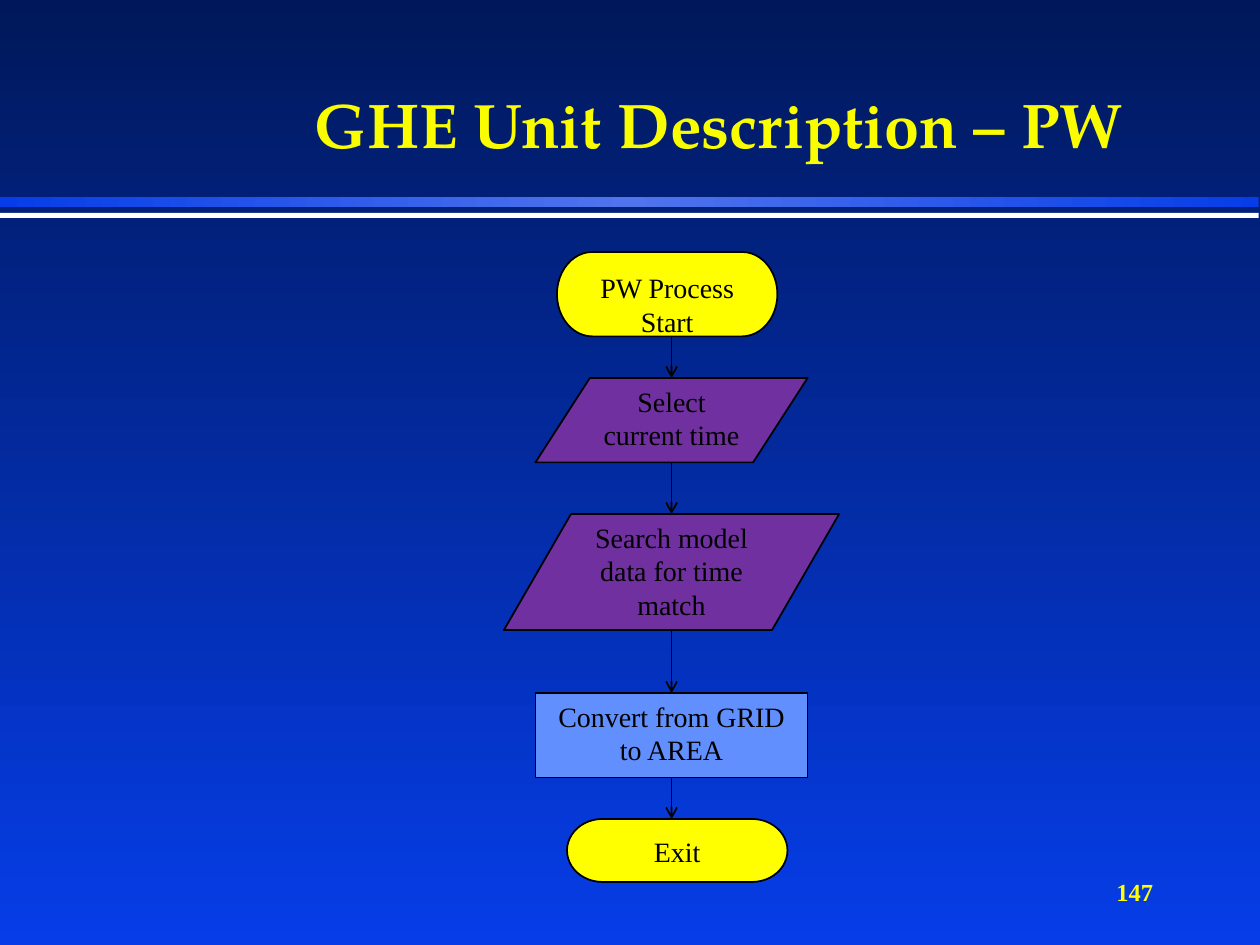
from copy import deepcopy
from typing import NamedTuple

from pptx import Presentation
from pptx.dml.color import RGBColor
from pptx.enum.shapes import MSO_CONNECTOR, MSO_SHAPE
from pptx.enum.text import MSO_ANCHOR, MSO_AUTO_SIZE, PP_ALIGN
from pptx.oxml.ns import qn
from pptx.oxml.xmlchemy import OxmlElement
from pptx.util import Inches, Pt

HUES = {
    "night": "00185A", "blue": "063DE8", "glow": "4F74EC", "white": "FFFFFF",
    "title": "FAFD00", "yellow": "FFFF00", "purple": "7030A0",
    "sky": "618FFD", "black": "000000",
}
SERIF = "Times New Roman"
AXIS = 5.33


class Step(NamedTuple):
    text: str
    kind: MSO_SHAPE
    hue: str
    left: float
    top: float
    width: float
    height: float


STEPS = [
    Step("PW Process Start", MSO_SHAPE.FLOWCHART_TERMINATOR, "yellow", 4.42, 2, 1.75, 0.67),
    Step("Select current time", MSO_SHAPE.FLOWCHART_DATA, "purple", 4.25, 3, 2.16, 0.67),
    Step("Search model data for time match", MSO_SHAPE.FLOWCHART_DATA, "purple", 4, 4.08, 2.66, 0.92),
    Step("Convert from GRID to AREA", MSO_SHAPE.FLOWCHART_PROCESS, "sky", 4.25, 5.5, 2.16, 0.67),
    Step("Exit", MSO_SHAPE.FLOWCHART_TERMINATOR, "yellow", 4.5, 6.5, 1.75, 0.5),
]


def rgb(hue: str) -> RGBColor:
    return RGBColor.from_string(HUES[hue])


def style(para, font: str, size: float, hue: str, align, bold: bool = False) -> None:
    para.alignment = align
    para.font.name = font
    para.font.size = Pt(size)
    para.font.bold = bold
    para.font.color.rgb = rgb(hue)


def add_bar(slide, top: float, height: float):
    bar = slide.shapes.add_shape(
        MSO_SHAPE.RECTANGLE, 0, Inches(top), Inches(9.99), Inches(height))
    bar.shadow.inherit = False
    bar.line.fill.background()
    return bar


def add_glow(bar) -> None:
    bar.fill.gradient()
    bar.fill.gradient_angle = 0
    stops = bar._element.spPr.find(qn("a:gradFill")).find(qn("a:gsLst"))
    stops.insert(1, deepcopy(stops[0]))
    for stop, spot, hue in zip(bar.fill.gradient_stops, (0, 0.5, 1), ("blue", "glow", "blue")):
        stop.position = spot
        stop.color.rgb = rgb(hue)


def add_step(slide, step: Step):
    shape = slide.shapes.add_shape(
        step.kind, Inches(step.left), Inches(step.top),
        Inches(step.width), Inches(step.height))
    shape.shadow.inherit = False
    shape.fill.solid()
    shape.fill.fore_color.rgb = rgb(step.hue)
    shape.line.color.rgb = rgb("black")
    shape.line.width = Pt(1)
    frame = shape.text_frame
    frame.text = step.text
    frame.word_wrap = True
    frame.vertical_anchor = MSO_ANCHOR.TOP
    style(frame.paragraphs[0], SERIF, 16, "black", PP_ALIGN.CENTER)
    return shape


def add_arrow(slide, start: Step, end: Step, above, below) -> None:
    arrow = slide.shapes.add_connector(
        MSO_CONNECTOR.STRAIGHT, Inches(AXIS), Inches(start.top + start.height),
        Inches(AXIS), Inches(end.top))
    arrow.line.color.rgb = rgb("black")
    arrow.line.width = Pt(1)
    tip = OxmlElement("a:tailEnd")
    tip.set("type", "arrow")
    arrow.line._get_or_add_ln().append(tip)
    arrow._element.spPr.append(OxmlElement("a:effectLst"))
    if start.kind == MSO_SHAPE.FLOWCHART_PROCESS:
        arrow.begin_connect(above, 2)
    if end.kind == MSO_SHAPE.FLOWCHART_PROCESS:
        arrow.end_connect(below, 0)


def add_title(slide) -> None:
    title = slide.shapes.title
    title.left, title.top = Inches(1.33), Inches(0.58)
    title.width, title.height = Inches(8.75), Inches(0.75)
    frame = title.text_frame
    frame.text = "GHE Unit Description – PW"
    frame.auto_size = MSO_AUTO_SIZE.NONE
    frame.vertical_anchor = MSO_ANCHOR.BOTTOM
    para = frame.paragraphs[0]
    para.line_spacing = 0.85
    style(para, "TeX Gyre Pagella", 36, "title", PP_ALIGN.CENTER, True)


def add_page(slide) -> None:
    box = slide.shapes.add_textbox(Inches(7.17), Inches(6.83), Inches(2.08), Inches(0.5))
    frame = box.text_frame
    frame.text = "147"
    frame.word_wrap = True
    frame.vertical_anchor = MSO_ANCHOR.MIDDLE
    style(frame.paragraphs[0], SERIF, 14, "yellow", PP_ALIGN.RIGHT, True)


def main() -> None:
    deck = Presentation()
    deck.slide_width, deck.slide_height = Inches(10), Inches(7.5)
    slide = deck.slides.add_slide(deck.slide_layouts[5])
    fill = slide.background.fill
    fill.gradient()
    fill.gradient_angle = 270
    for stop, hue in zip(fill.gradient_stops, ("night", "blue")):
        stop.color.rgb = rgb(hue)

    add_glow(add_bar(slide, 1.56, 0.08))
    rule = add_bar(slide, 1.69, 0.04)
    rule.fill.solid()
    rule.fill.fore_color.rgb = rgb("white")
    add_title(slide)
    add_page(slide)

    shapes = [add_step(slide, step) for step in STEPS]
    for start, end, above, below in zip(STEPS, STEPS[1:], shapes, shapes[1:]):
        add_arrow(slide, start, end, above, below)
    deck.save("out.pptx")


if __name__ == "__main__":
    main()
